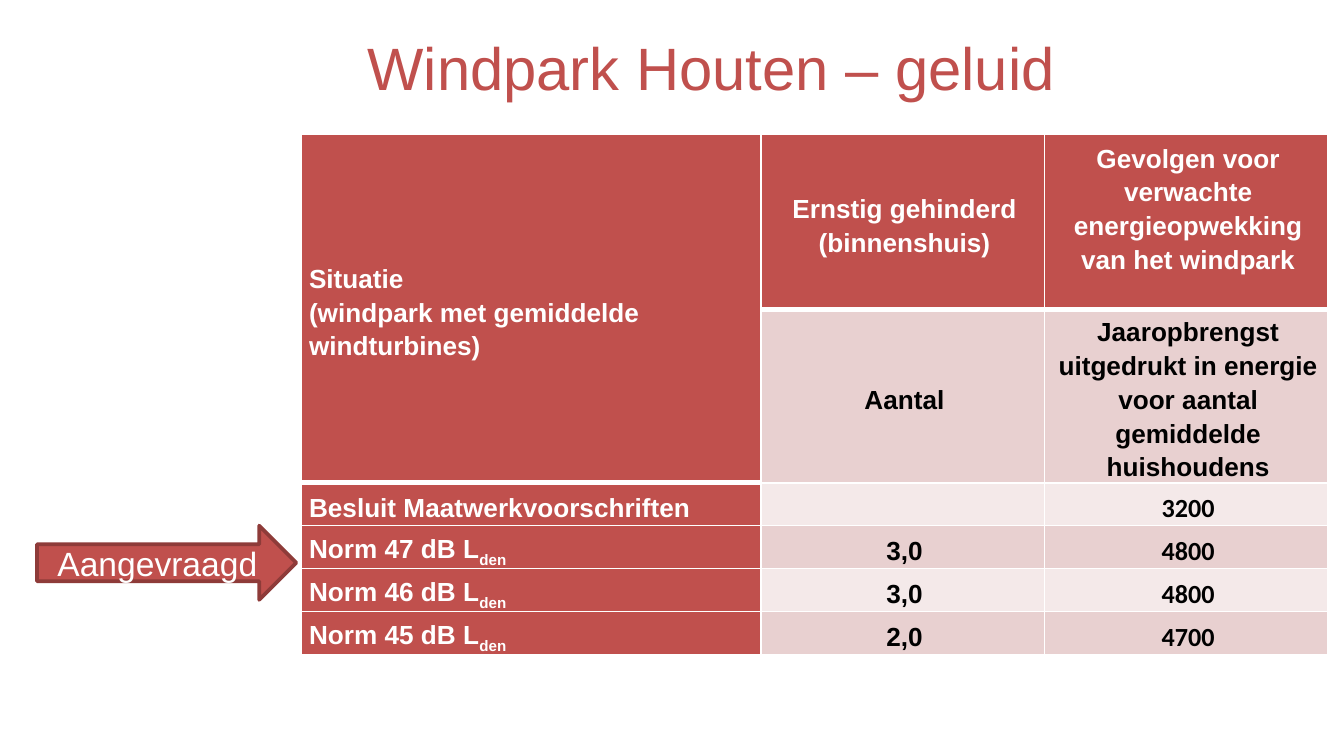
from copy import deepcopy
from dataclasses import dataclass

from lxml import etree
from pptx import Presentation
from pptx.dml.color import RGBColor
from pptx.enum import shapes, text
from pptx.oxml import ns
from pptx.util import Cm, Pt

RED, DARK_RED, WHITE, BLACK = "C0504D", "8E3B39", "FFFFFF", "000000"
BANDS = ("F4E9E9", "E8D0D0")
COLUMN_WIDTHS = (8.69, 5.36, 5.36)
ROW_HEIGHTS = (3.3, 3.28, 0.81, 0.81, 0.81, 0.81)
FIRST_BODY_ROWS = (2, 1, 1)  # per column, the row below the thick rule
LEFT, CENTER = text.PP_ALIGN.LEFT, text.PP_ALIGN.CENTER
MIDDLE = text.MSO_ANCHOR.MIDDLE


@dataclass
class Entry:
    wording: str
    subscript: str = ""
    font: str = "Arial"


@dataclass
class Style:
    size: float
    color: str
    font: str = "Arial"
    bold: bool = False


def rgb(value: str) -> RGBColor:
    return RGBColor.from_string(value)


def set_values(target, values: dict) -> None:
    for name, value in values.items():
        setattr(target, name, value)


def add_run(paragraph, wording: str, style: Style):
    run = paragraph.add_run()
    run.text = wording
    set_values(run.font, {"size": Pt(style.size), "name": style.font, "bold": style.bold})
    run.font.color.rgb = rgb(style.color)
    return run


def write_label(shape, wording: str, style: Style) -> None:
    """Centre one line of text in a shape or text box."""
    set_values(shape.text_frame, {"word_wrap": True, "vertical_anchor": MIDDLE})
    paragraph = shape.text_frame.paragraphs[0]
    paragraph.alignment = CENTER
    add_run(paragraph, wording, style)


def set_borders(cell, top: float, bottom: float) -> None:
    """Draw white cell borders; widths are in points."""
    properties = cell._tc.get_or_add_tcPr()
    for side, width in (("L", 1), ("R", 1), ("T", top), ("B", bottom)):
        line = etree.SubElement(properties, ns.qn(f"a:ln{side}"), w=str(Pt(width)))
        fill = etree.SubElement(line, ns.qn("a:solidFill"))
        etree.SubElement(fill, ns.qn("a:srgbClr"), val=WHITE)


def write_cell(cell, entry: Entry, alignment, color: str) -> None:
    paragraph = cell.text_frame.paragraphs[0]
    set_values(paragraph, {"alignment": alignment, "line_spacing": 1.15})
    if not entry.wording:
        paragraph._p.get_or_add_endParaRPr().set("sz", "1400")
        return
    style = Style(14, color, entry.font, True)
    for index, line in enumerate(entry.wording.split("\n")):
        if index:
            paragraph.add_line_break()
            paragraph._p[-1].insert(0, deepcopy(run._r.rPr))
        run = add_run(paragraph, line, style)
    if entry.subscript:
        run = add_run(paragraph, entry.subscript, style)
        run._r.get_or_add_rPr().set("baseline", "-25000")


def format_cell(cell, row: int, column: int, entry: Entry) -> None:
    set_values(cell, {
        "margin_left": Cm(0.15), "margin_right": Cm(0.08),
        "margin_top": Cm(0.08), "margin_bottom": 0, "vertical_anchor": MIDDLE,
    })
    first = FIRST_BODY_ROWS[column]
    set_borders(cell, 3 if row == first else 1, 3 if row < first else 1)
    is_red = column == 0 or row < first
    cell.fill.solid()
    cell.fill.fore_color.rgb = rgb(RED if is_red else BANDS[row % 2])
    write_cell(cell, entry, CENTER if column else LEFT, WHITE if is_red else BLACK)


def norm_row(level: int, affected: str, households: str) -> list[Entry]:
    return [Entry(f"Norm {level} dB L", "den"), Entry(affected),
            Entry(households, font="Calibri")]


ROWS = [
    [Entry("Situatie\n(windpark met gemiddelde windturbines)"),
     Entry("Ernstig gehinderd (binnenshuis)"),
     Entry("Gevolgen voor verwachte energieopwekking van het windpark")],
    [Entry(""), Entry("Aantal"),
     Entry("Jaaropbrengst uitgedrukt in energie voor aantal gemiddelde huishoudens")],
    [Entry("Besluit Maatwerkvoorschriften"), Entry(""), Entry("3200", font="Calibri")],
    norm_row(47, "3,0", "4800"),
    norm_row(46, "3,0", "4800"),
    norm_row(45, "2,0", "4700"),
]


def add_noise_table(slide) -> None:
    table = slide.shapes.add_table(
        len(ROWS), len(COLUMN_WIDTHS), Cm(5.69), Cm(2.54),
        Cm(sum(COLUMN_WIDTHS)), Cm(sum(ROW_HEIGHTS))).table
    for column, width in zip(table.columns, COLUMN_WIDTHS):
        column.width = Cm(width)
    for row, height in zip(table.rows, ROW_HEIGHTS):
        row.height = Cm(height)
    for row, entries in enumerate(ROWS):
        for column, entry in enumerate(entries):
            format_cell(table.cell(row, column), row, column, entry)
    table.cell(0, 0).merge(table.cell(1, 0))
    table.cell(0, 2).margin_bottom = Cm(0.62)


def add_title(slide) -> None:
    title = slide.shapes.add_textbox(Cm(1.5), Cm(0.36), Cm(23.9), Cm(1.78))
    write_label(title, "Windpark Houten – geluid", Style(32, RED))


def add_request_arrow(slide) -> None:
    arrow = slide.shapes.add_shape(
        shapes.MSO_SHAPE.RIGHT_ARROW, Cm(0.7), Cm(9.93), Cm(4.9), Cm(1.4))
    arrow.shadow.inherit = False
    arrow.fill.solid()
    arrow.fill.fore_color.rgb = rgb(RED)
    arrow.line.color.rgb = rgb(DARK_RED)
    arrow.line.width = Pt(2)
    write_label(arrow, "Aangevraagd", Style(18, WHITE))


def main() -> None:
    presentation = Presentation()
    set_values(presentation, {"slide_width": Cm(25.4), "slide_height": Cm(14.28)})
    slide = presentation.slides.add_slide(presentation.slide_layouts[6])
    add_noise_table(slide)
    add_title(slide)
    add_request_arrow(slide)
    presentation.save("out.pptx")


if __name__ == "__main__":
    main()
